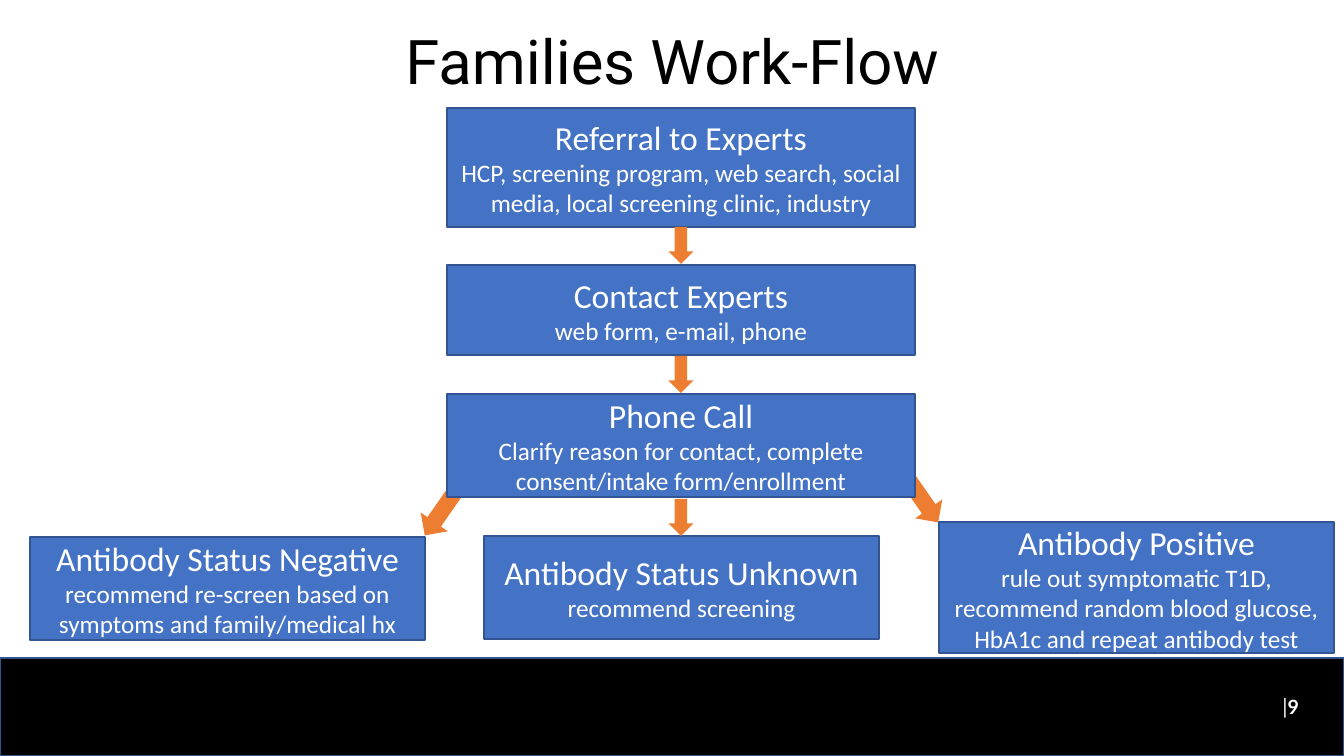
from pptx import Presentation
from pptx.dml.color import RGBColor
from pptx.enum.shapes import MSO_SHAPE
from pptx.enum.text import MSO_ANCHOR, PP_ALIGN
from pptx.util import Emu, Pt

RECTANGLE, DOWN_ARROW = MSO_SHAPE.RECTANGLE, MSO_SHAPE.DOWN_ARROW
TOP, MIDDLE = MSO_ANCHOR.TOP, MSO_ANCHOR.MIDDLE
CENTER, RIGHT = PP_ALIGN.CENTER, PP_ALIGN.RIGHT

# Content: lengths in px
PAGE_WIDTH, PAGE_HEIGHT = 1344, 756
BLUE, BLUE_EDGE, ORANGE = "4472C4", "325491", "ED7D31"
BLACK, WHITE = "000000", "FFFFFF"

TITLE = "Families Work-Flow"
PAGE_NUMBER = "9"

# Main column, top to bottom: top, height, heading, detail
STEP_LEFT, STEP_WIDTH = 447, 468
STEPS = [
    (108, 119, "Referral to Experts",
     "HCP, screening program, web search, social media, local screening clinic, industry"),
    (265, 90, "Contact Experts", "web form, e-mail, phone"),
    (394, 103, "Phone Call",
     "Clarify reason for contact, complete consent/intake form/enrollment"),
]

# Outcomes, left to right: left, top, height, heading, detail
OUTCOME_WIDTH = 395
OUTCOMES = [
    (30, 537, 103, "Antibody Status Negative",
     "recommend re-screen based on symptoms and family/medical hx"),
    (484, 536, 103, "Antibody Status Unknown", "recommend screening"),
    (939, 522, 131, "Antibody Positive",
     "rule out symptomatic T1D, recommend random blood glucose, "
     "HbA1c and repeat antibody test"),
]

# Arrows: width, height; the slanted ones as left, top, rotation
SPINE_ARROW = (25, 37)
SLANT_ARROW = (33, 62)
SLANTS = [(904, 466, 325.2), (426, 479, 34.8)]

HEADING = {"size": Pt(24), "name": "Calibri"}
DETAIL = {"size": Pt(18), "name": "Calibri"}
TITLE_FONT = {"size": Pt(44), "name": "Roboto"}
BAR_FONT = {"size": Pt(15), "name": "Lato"}
NUMBER_FONT = {"size": Pt(14), "name": "Lato", "bold": True}


def px(length):
    return Emu(round(length * 914400 / 100.8))


def color(value):
    return RGBColor.from_string(value)


deck = Presentation()
deck.slide_width, deck.slide_height = px(PAGE_WIDTH), px(PAGE_HEIGHT)
page = deck.slides.add_slide(deck.slide_layouts[6])


def add_span(para, text, font, font_color):
    span = para.add_run()
    span.text = text
    for name, value in font.items():
        setattr(span.font, name, value)
    span.font.color.rgb = color(font_color)


def add_shape(kind, left, top, width, height, fill, edge=None, rotation=0):
    shape = page.shapes.add_shape(kind, px(left), px(top), px(width), px(height))
    shape.shadow.inherit = False
    shape.rotation = rotation
    shape.fill.solid()
    shape.fill.fore_color.rgb = color(fill)
    if edge:
        shape.line.color.rgb = color(edge)
        shape.line.width = Pt(1)
    else:
        shape.line.fill.background()
    return shape


def add_box(left, top, width, height, heading, detail):
    frame = add_shape(RECTANGLE, left, top, width, height, BLUE, BLUE_EDGE).text_frame
    frame.word_wrap = True
    frame.vertical_anchor = MIDDLE
    for para, text, font in ((frame.paragraphs[0], heading, HEADING),
                             (frame.add_paragraph(), detail, DETAIL)):
        para.alignment = CENTER
        add_span(para, text, font, WHITE)


def add_label(left, top, width, height, alignment):
    frame = page.shapes.add_textbox(px(left), px(top), px(width), px(height)).text_frame
    frame.word_wrap = True
    frame.vertical_anchor = TOP
    frame.paragraphs[0].alignment = alignment
    return frame.paragraphs[0]


# Footer band and page number
add_shape(RECTANGLE, 0, 658, PAGE_WIDTH, 98, BLACK, BLUE_EDGE)
number = add_label(950, 689, 359, 35, RIGHT)
add_span(number, "|", BAR_FONT, WHITE)
add_span(number, PAGE_NUMBER, NUMBER_FONT, WHITE)

# Slanted arrows, tucked behind the boxes
for left, top, rotation in SLANTS:
    add_shape(DOWN_ARROW, left, top, *SLANT_ARROW, ORANGE, rotation=rotation)

# Title
title = add_label(93, 26, 1159, 98, CENTER)
title.line_spacing = 0.9
add_span(title, TITLE, TITLE_FONT, BLACK)

# Boxes
for top, height, heading, detail in STEPS:
    add_box(STEP_LEFT, top, STEP_WIDTH, height, heading, detail)
for left, top, height, heading, detail in OUTCOMES:
    add_box(left, top, OUTCOME_WIDTH, height, heading, detail)

# Straight arrows, each ending just above the next box in the column
arrow_width, arrow_height = SPINE_ARROW
arrow_left = STEP_LEFT + (STEP_WIDTH - arrow_width) / 2
for target_top in (STEPS[1][0], STEPS[2][0], OUTCOMES[1][1] + 1):
    add_shape(DOWN_ARROW, arrow_left, target_top - 1 - arrow_height, *SPINE_ARROW, ORANGE)

deck.save("out.pptx")
